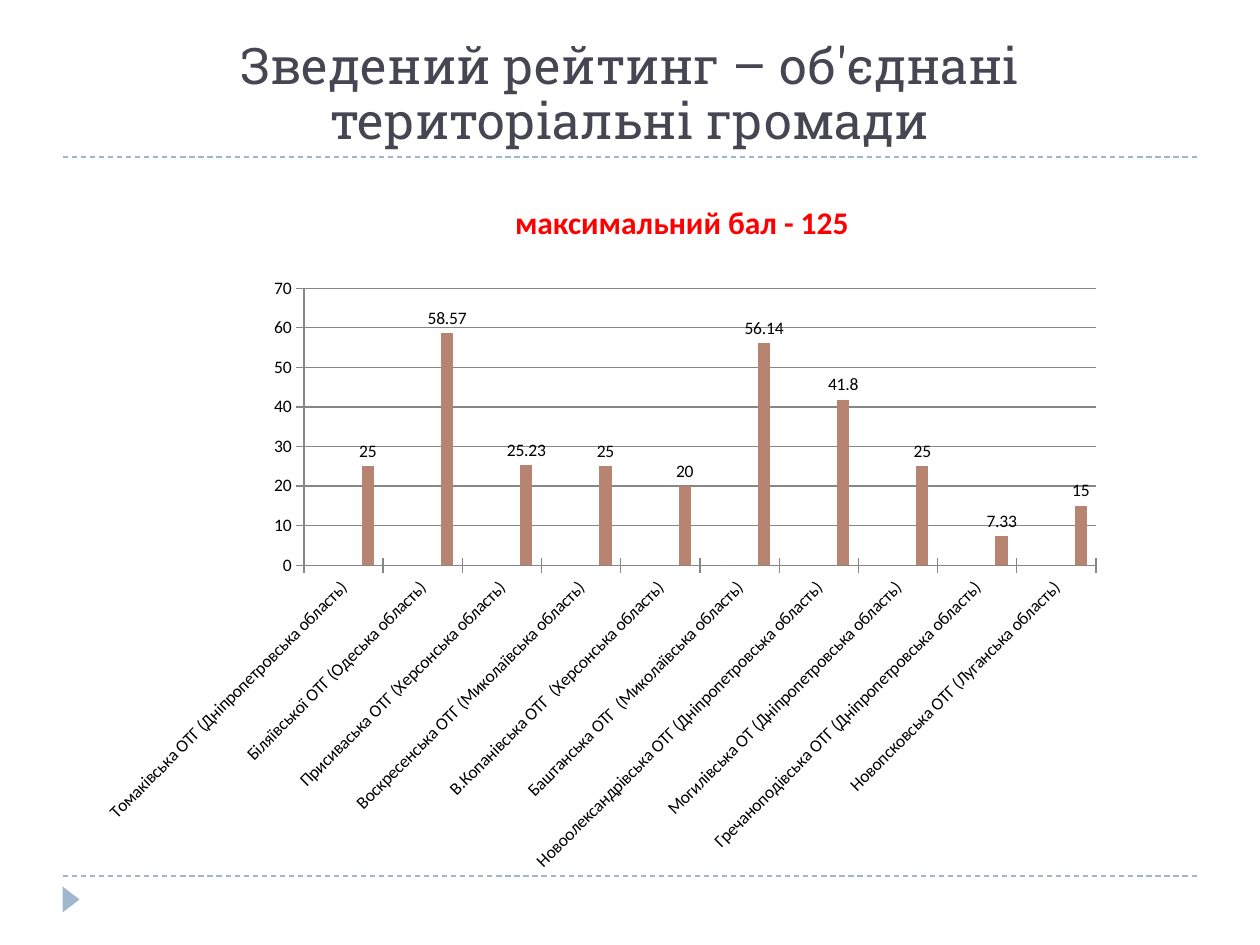
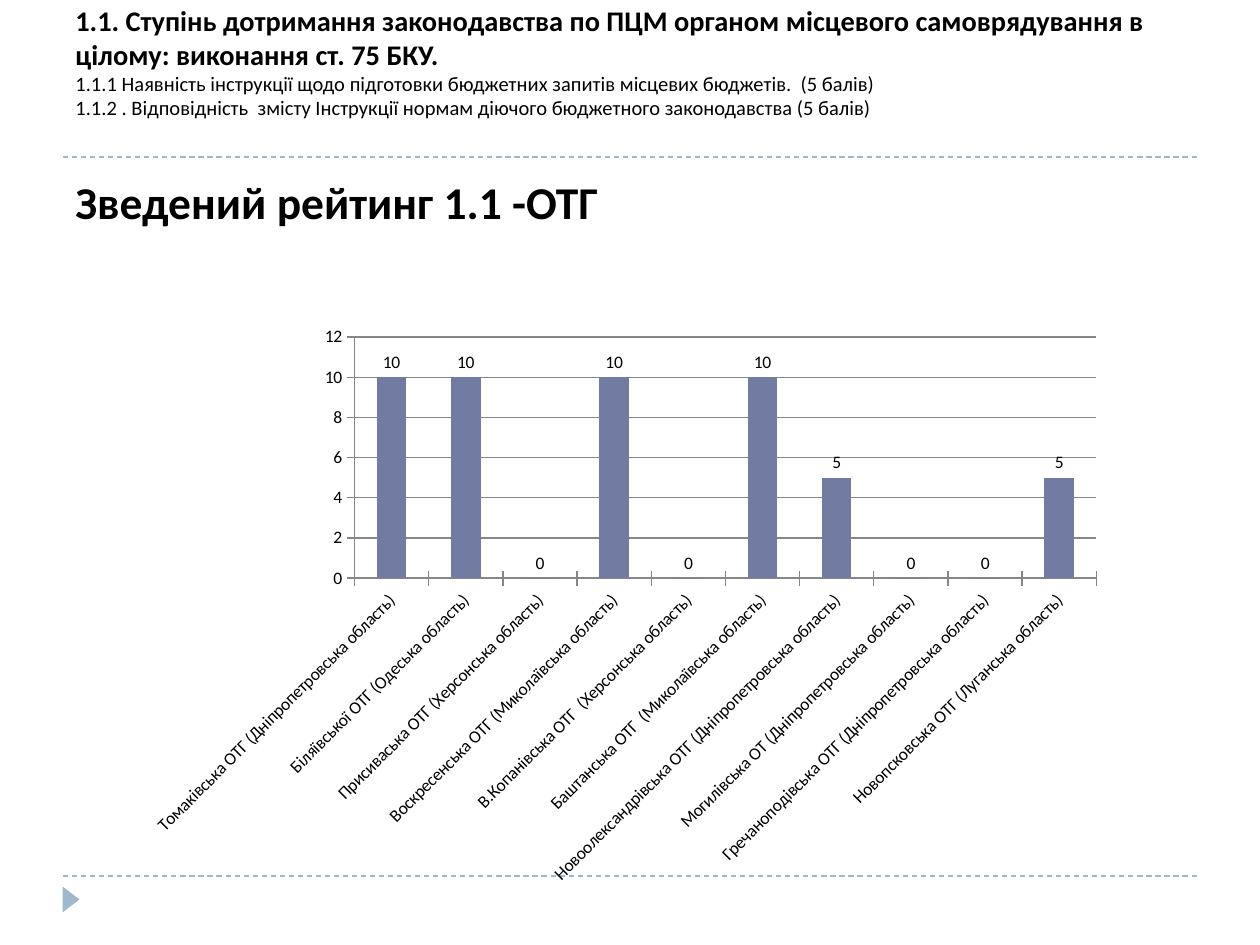
"""Build two slides that rank united communities by their scores."""
from dataclasses import dataclass

import lxml.etree
import pptx
import pptx.chart.data
import pptx.dml.color
import pptx.enum.chart
import pptx.enum.dml
import pptx.enum.shapes
import pptx.enum.text
import pptx.oxml
import pptx.oxml.ns
import pptx.util

PX_PER_INCH = 126
SLIDE_BOX = (0, 0, 1260, 945)
HEADING_BOX = (63, 21, 1134, 136)
BODY_BOX = (63, 168, 1134, 680)


@dataclass(frozen=True)
class Theme:
    """Colours, fonts and type sizes shared by the slides."""
    ink: str = "000000"
    heading: str = "464653"
    accent: str = "FF0000"
    trim: str = "9FB8CD"
    grid: str = "868686"
    series: tuple = ("727CA3", "9FB8CD", "D2DA7A", "FADA7A", "B88472")
    heading_font: str = "Roboto Slab"
    body_font: str = "Calibri"
    heading_size: float = 28.8
    rating_size: float = 26
    maximum_size: float = 18
    criterion_size: float = 16.2
    detail_size: float = 11.7
    chart_size: float = 10


THEME = Theme()
COMMUNITIES = [
    "Томаківська ОТГ (Дніпропетровська область)",
    "Біляївської ОТГ (Одеська область)",
    "Присиваська ОТГ (Херсонська область)",
    "Воскресенська ОТГ (Миколаївська область)",
    "В.Копанівська ОТГ  (Херсонська область)",
    "Баштанська ОТГ  (Миколаївська область)",
    "Новоолександрівська ОТГ (Дніпропетровська область)",
    "Могилівська ОТ (Дніпропетровська область)",
    "Гречаноподівська ОТГ (Дніпропетровська область)",
    "Новопсковська ОТГ (Луганська область)",
]
BLANK = [None] * len(COMMUNITIES)
TOTAL_SCORES = [
    BLANK,
    [0 if name.startswith("Баштанська") else None for name in COMMUNITIES],
    BLANK,
    BLANK,
    [25, 58.57, 25.23, 25, 20, 56.14, 41.8, 25, 7.33, 15],
]
LAW_SCORES = [[10, 10, 0, 10, 0, 10, 5, 0, 0, 5]]


def px(length):
    """Turn pixels into EMU."""
    return pptx.util.Emu(round(length * pptx.util.Inches(1) / PX_PER_INCH))


def rgb(code):
    """Turn a hex code into a colour."""
    return pptx.dml.color.RGBColor.from_string(code)


def set_font(font, size, color=THEME.ink, face=THEME.body_font, bold=False):
    """Apply face, size, colour and weight to a font."""
    font.name, font.size, font.bold = face, pptx.util.Pt(size), bold
    font.color.rgb = rgb(color)


def add_text(slide, box, *lines, align="LEFT", anchor="TOP", wrap=True,
             bottom_inset=6, spacing=None, before=0, **style):
    """Write lines, each a string or a (string, format) pair, in a box."""
    frame = slide.shapes.add_textbox(*map(px, box)).text_frame
    frame.word_wrap = wrap
    frame.margin_bottom = px(bottom_inset)
    frame.vertical_anchor = pptx.enum.text.MSO_ANCHOR[anchor]
    for index, line in enumerate(lines):
        words, extra = (line, {}) if isinstance(line, str) else line
        paragraph = frame.add_paragraph() if index else frame.paragraphs[0]
        paragraph.alignment = pptx.enum.text.PP_ALIGN[align]
        paragraph.space_before = pptx.util.Pt(before)
        if spacing:
            paragraph.line_spacing = spacing
        run = paragraph.add_run()
        run.text = words
        set_font(run.font, **{**style, **extra})


def add_frame(slide, box):
    """Draw the two dashed rules and the footer pointer."""
    left, top, width, _ = box
    for rule_y in (top + 157, top + 876):
        rule = slide.shapes.add_connector(
            pptx.enum.shapes.MSO_CONNECTOR.STRAIGHT,
            px(left + 63), px(rule_y), px(left + width - 63), px(rule_y))
        rule.line.color.rgb = rgb(THEME.trim)
        rule.line.width = pptx.util.Pt(0.75)
        rule.line.dash_style = pptx.enum.dml.MSO_LINE.DASH
        lxml.etree.SubElement(rule._element.spPr,
                              pptx.oxml.ns.qn("a:effectLst"))
    pointer = slide.shapes.add_shape(
        pptx.enum.shapes.MSO_SHAPE.ISOSCELES_TRIANGLE,
        px(left + 58), px(top + 891), px(26), px(17))
    pointer.rotation = 90
    pointer.shadow.inherit = False
    pointer.fill.solid()
    pointer.fill.fore_color.rgb = rgb(THEME.trim)
    pointer.line.fill.background()


def place_plot(chart, box, plot_box):
    """Fix the inner plot area at a box given relative to the chart."""
    shares = [part / whole for part, whole in zip(plot_box, box[2:] * 2)]
    sizes = "".join(f'<c:{tag} val="{share:.3f}"/>'
                    for tag, share in zip("xywh", shares))
    area = chart._chartSpace.chart.plotArea
    for layout in area.findall(pptx.oxml.ns.qn("c:layout")):
        area.remove(layout)
    area.insert(0, pptx.oxml.parse_xml(
        f'<c:layout {pptx.oxml.ns.nsdecls("c")}><c:manualLayout>'
        '<c:layoutTarget val="inner"/><c:xMode val="edge"/>'
        f'<c:yMode val="edge"/>{sizes}</c:manualLayout></c:layout>'))


def add_ranking(slide, box, plot_box, scores):
    """Chart the scores of the communities and label the last series."""
    data = pptx.chart.data.CategoryChartData()
    data.categories = COMMUNITIES
    for number, values in enumerate(scores, 1):
        data.add_series(f"Series {number}", values)
    chart = slide.shapes.add_chart(
        pptx.enum.chart.XL_CHART_TYPE.COLUMN_CLUSTERED,
        *map(px, box), data).chart
    chart.has_legend = chart.has_title = False
    set_font(chart.font, THEME.chart_size)
    bars = chart.plots[0]
    bars.gap_width = 150
    bars.vary_by_categories = False
    for series, color in zip(bars.series, THEME.series):
        series.format.fill.solid()
        series.format.fill.fore_color.rgb = rgb(color)
    labels = bars.series[-1].data_labels
    labels.show_value = True
    labels.position = pptx.enum.chart.XL_LABEL_POSITION.OUTSIDE_END
    set_font(labels.font, THEME.chart_size)
    chart.value_axis.has_major_gridlines = True
    grid = chart.value_axis.major_gridlines
    for axis in (chart.category_axis, chart.value_axis):
        axis.major_tick_mark = pptx.enum.chart.XL_TICK_MARK.CROSS
        axis.minor_tick_mark = pptx.enum.chart.XL_TICK_MARK.NONE
        set_font(axis.tick_labels.font, THEME.chart_size)
    for part in (chart.category_axis, chart.value_axis, grid):
        part.format.line.color.rgb = rgb(THEME.grid)
        part.format.line.width = pptx.util.Pt(0.75)
    names = chart.category_axis._element.find(
        ".//" + pptx.oxml.ns.qn("a:bodyPr"))
    names.set("rot", "-2700000")
    names.set("vert", "horz")
    place_plot(chart, box, plot_box)


def add_total_slide(slide):
    """Show the overall ranking."""
    add_frame(slide, SLIDE_BOX)
    add_text(slide, HEADING_BOX,
             "Зведений рейтинг – об'єднані територіальні громади",
             align="CENTER", anchor="BOTTOM", spacing=0.92,
             face=THEME.heading_font, size=THEME.heading_size,
             color=THEME.heading)
    add_text(slide, (472, 197, 420, 50), "максимальний бал - 125",
             align="CENTER", wrap=False, size=THEME.maximum_size,
             color=THEME.accent, bold=True)
    add_ranking(slide, (88, 266, 1033, 617), (216, 22, 792, 277),
                TOTAL_SCORES)


def add_law_slide(slide):
    """Show the ranking for criterion 1.1."""
    add_frame(slide, SLIDE_BOX)
    criterion = {"size": THEME.criterion_size, "bold": True}
    add_text(slide, HEADING_BOX,
             ("1.1. Ступінь дотримання законодавства по ПЦМ органом місцевого "
              "самоврядування в цілому: виконання ст. 75 БКУ.", criterion),
             "1.1.1 Наявність інструкції щодо підготовки бюджетних запитів "
             "місцевих бюджетів.  (5 балів)",
             "1.1.2 . Відповідність  змісту Інструкції нормам діючого "
             "бюджетного законодавства (5 балів)",
             anchor="BOTTOM", bottom_inset=37, size=THEME.detail_size)
    add_text(slide, BODY_BOX, "Зведений рейтинг 1.1 -ОТГ", before=6,
             size=THEME.rating_size, bold=True)
    add_ranking(slide, (137, 315, 984, 581), (217, 22, 742, 241), LAW_SCORES)


def main():
    """Build and save the presentation."""
    deck = pptx.Presentation()
    deck.slide_width, deck.slide_height = map(px, SLIDE_BOX[2:])
    for fill_slide in (add_total_slide, add_law_slide):
        fill_slide(deck.slides.add_slide(deck.slide_layouts[6]))
    deck.save("out.pptx")


if __name__ == "__main__":
    main()
